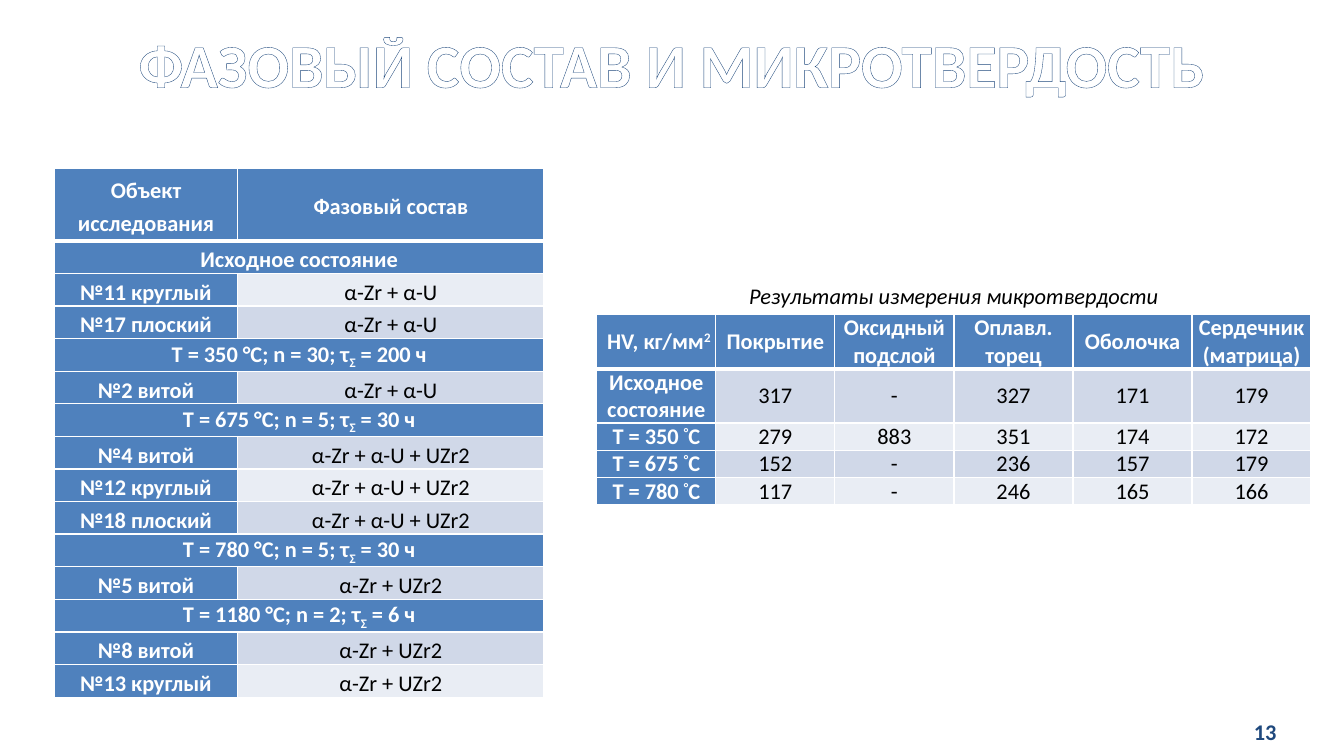
import pptx
import pptx.util
import pptx.dml.color
import pptx.enum.text
import pptx.oxml
import pptx.oxml.ns
from pptx.util import Cm

COLORS = {"white": "FFFFFF", "black": "000000", "navy": "1F497D", "head": "4F81BD",
          "odd": "D0D8E8", "even": "E9EDF4"}
CENTER = pptx.enum.text.PP_ALIGN.CENTER
MIDDLE = pptx.enum.text.MSO_ANCHOR.MIDDLE
TOP = pptx.enum.text.MSO_ANCHOR.TOP
NS = pptx.oxml.ns.nsdecls("a")


def regime(temperature, cycles, hours):
    return [(f"Т = {temperature} °С; n = {cycles}; τ", 0), ("Σ", -25), (f" = {hours} ч", 0)]


def temperature_label(value):
    return [(f"Т = {value} ", 0), ("°", 30), ("С", 0)]


# A row with a single entry spans the whole table.
PHASE_ROWS = [
    ["Объект исследования", "Фазовый состав"],
    ["Исходное состояние"],
    ["№11 круглый", "α-Zr + α-U"],
    ["№17 плоский", "α-Zr + α-U"],
    [regime(350, 30, 200)],
    ["№2 витой", "α-Zr + α-U"],
    [regime(675, 5, 30)],
    ["№4 витой", "α-Zr + α-U + UZr2"],
    ["№12 круглый", "α-Zr + α-U + UZr2"],
    ["№18 плоский", "α-Zr + α-U + UZr2"],
    [regime(780, 5, 30)],
    ["№5 витой", "α-Zr + UZr2"],
    [regime(1180, 2, 6)],
    ["№8 витой", "α-Zr + UZr2"],
    ["№13 круглый", "α-Zr + UZr2"],
]
HARDNESS_ROWS = [
    [[(" HV, кг/мм", 0), ("2", 30)], "Покрытие", "Оксидный подслой", "Оплавл. торец",
     "Оболочка", "Сердечник (матрица)"],
    ["Исходное состояние", "317", "-", "327", "171", "179"],
    [temperature_label(350), "279", "883", "351", "174", "172"],
    [temperature_label(675), "152", "-", "236", "157", "179"],
    [temperature_label(780), "117", "-", "246", "165", "166"],
]


def rgb(name):
    return pptx.dml.color.RGBColor.from_string(COLORS[name])


def add_runs(paragraph, content, color, size=16, bold=False, italic=False):
    """Content is a string or a list of (text, baseline shift in percent)."""
    paragraph.alignment = CENTER
    parts = [(content, 0)] if isinstance(content, str) else content
    for text, shift in parts:
        run = paragraph.add_run()
        run.text = text
        run.font.name = "Calibri"
        run.font.size = pptx.util.Pt(size)
        run.font.bold = bold
        run.font.italic = italic
        run.font.color.rgb = rgb(color)
        if shift:
            run.font._element.set("baseline", str(shift * 1000))


def line_xml(tag, color, points):
    return pptx.oxml.parse_xml(
        f'<a:{tag} {NS} w="{int(points * 12700)}"><a:solidFill>'
        f'<a:srgbClr val="{COLORS[color]}"/></a:solidFill></a:{tag}>')


def add_label(slide, box, text, color, anchor=MIDDLE, **style):
    frame = slide.shapes.add_textbox(*map(Cm, box)).text_frame
    frame.word_wrap = True
    frame.vertical_anchor = anchor
    add_runs(frame.paragraphs[0], text, color, **style)
    return frame


def add_title(slide, box):
    frame = add_label(slide, box, "ФАЗОВЫЙ СОСТАВ И МИКРОТВЕРДОСТЬ", "white", size=44, bold=True)
    frame.paragraphs[0].runs[0].font._element.insert(0, line_xml("ln", "navy", 0.8))


def style_cell(cell, row, fill, side_margin):
    cell.vertical_anchor = MIDDLE
    cell.margin_left = cell.margin_right = Cm(side_margin)
    cell.margin_top = cell.margin_bottom = 0
    widths = {"lnL": 1, "lnR": 1, "lnT": 3 if row == 1 else 1, "lnB": 3 if row == 0 else 1}
    properties = cell._tc.get_or_add_tcPr()
    for side, width in widths.items():
        properties.append(line_xml(side, "white", width))
    cell.fill.solid()
    cell.fill.fore_color.rgb = rgb(fill)


def add_data_table(slide, left, top, widths, heights, rows, side_margin, spacing=None):
    table = slide.shapes.add_table(len(rows), len(widths), Cm(left), Cm(top),
                                   Cm(sum(widths)), Cm(sum(heights))).table
    for column, width in zip(table.columns, widths):
        column.width = Cm(width)
    for line, height in zip(table.rows, heights):
        line.height = Cm(height)
    for r, row in enumerate(rows):
        if len(row) == 1:
            table.cell(r, 0).merge(table.cell(r, len(widths) - 1))
        for c, content in enumerate(row):
            heading = r == 0 or c == 0
            cell = table.cell(r, c)
            style_cell(cell, r, "head" if heading else ("odd" if r % 2 else "even"), side_margin)
            paragraph = cell.text_frame.paragraphs[0]
            if spacing:
                has_shift = len(row) == 1 and not isinstance(content, str)
                paragraph.line_spacing = 1.07 if has_shift else spacing
            add_runs(paragraph, content, "white" if heading else "black", bold=heading)


def add_phase_table(slide, left, top):
    heights = [1.83] + [0.82] * (len(PHASE_ROWS) - 1)
    add_data_table(slide, left, top, [4.62, 7.72], heights, PHASE_ROWS, 0.18, spacing=1.2)


def add_hardness_block(slide, left, top, width):
    caption_height = 0.94
    add_label(slide, (left, top, width, caption_height),
              "Результаты измерения микротвердости", "black", anchor=TOP, italic=True)
    columns = len(HARDNESS_ROWS[0])
    add_data_table(slide, left, top + caption_height, [width / columns] * columns,
                   [1.37, 1.37, 0.69, 0.69, 0.69], HARDNESS_ROWS, 0.13)


def main():
    deck = pptx.Presentation()
    deck.slide_width, deck.slide_height = Cm(33.87), Cm(19.05)
    slide = deck.slides.add_slide(deck.slide_layouts[6])
    add_title(slide, (1.7, 0, 30.48, 3.18))
    add_label(slide, (31.06, 17.93, 1.65, 1.02), "13", "navy", bold=True)
    add_phase_table(slide, 1.37, 4.24)
    add_hardness_block(slide, 15.04, 6.98, 18)
    deck.save("out.pptx")


if __name__ == "__main__":
    main()
